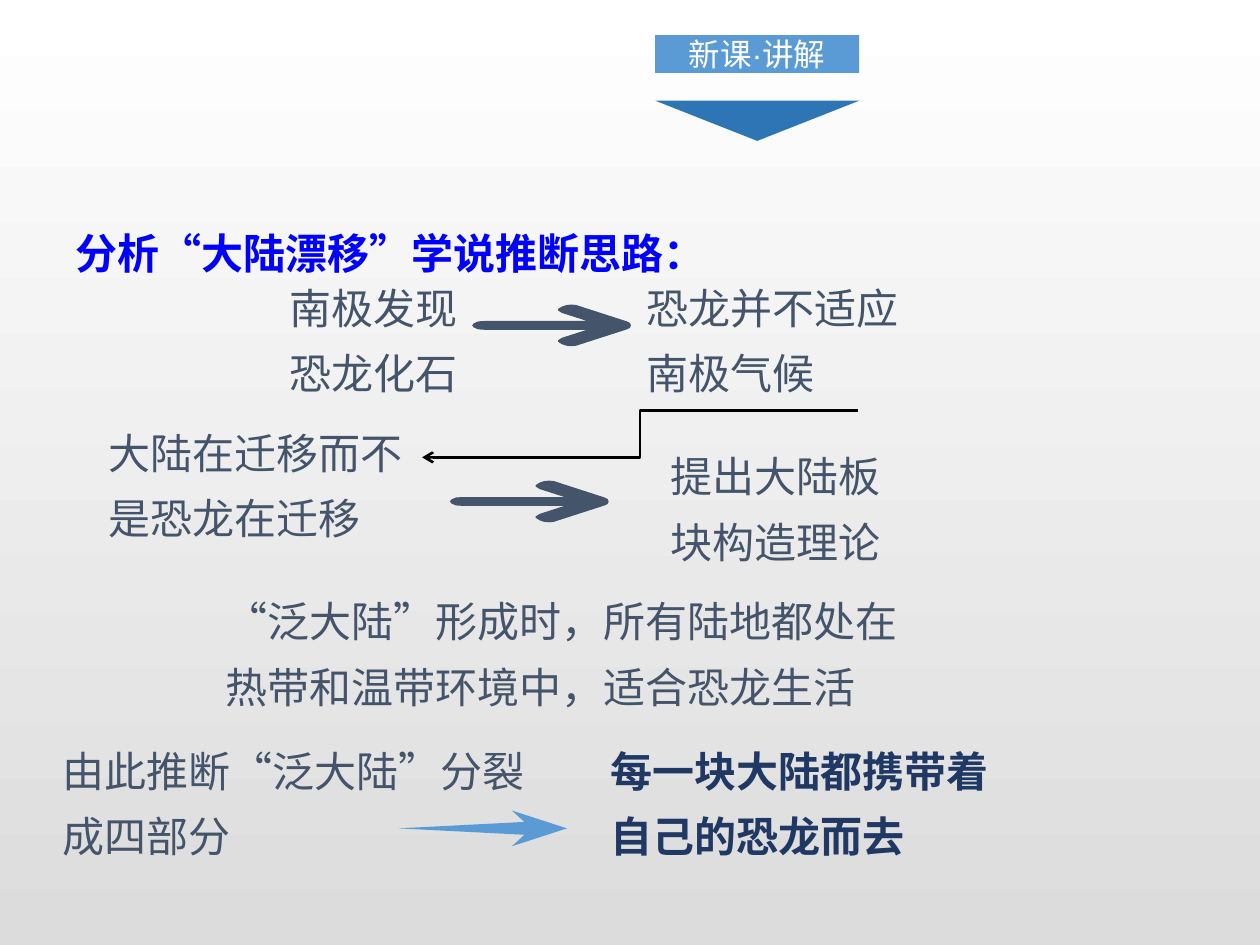
from dataclasses import dataclass

from lxml.etree import SubElement
from pptx import Presentation
from pptx.dml.color import RGBColor
from pptx.enum.lang import MSO_LANGUAGE_ID as Lang
from pptx.enum.shapes import MSO_CONNECTOR as Connector, MSO_SHAPE as Shape
from pptx.enum.text import MSO_ANCHOR as Anchor, MSO_AUTO_SIZE as AutoSize, PP_ALIGN as Align
from pptx.oxml.ns import qn
from pptx.util import Cm, Pt


@dataclass(frozen=True)
class Theme:
    heading: str = "0000FF"
    body: str = "44546A"
    conclusion: str = "203864"
    banner: str = "5B9BD5"
    banner_tip: str = "2E75B6"
    banner_text: str = "FFFFFF"
    line: str = "000000"
    background: tuple = ("FFFFFF", "DCDCDC")
    text_size: int = 24
    banner_size: int = 18
    cjk_font: str = "Noto Sans CJK SC"
    heading_font: str = "Times New Roman"
    banner_font: str = "Arial"


# Upper halves of the arrow outlines, from tail to tip, in cm around the axis
ROUND_ARROW = [(0, 0), (0.03, -0.04), (0.12, -0.08), (0.26, -0.09),
               (2.31, -0.09), (1.81, -0.25), (1.73, -0.3), (1.73, -0.33),
               (1.81, -0.38), (1.9, -0.41), (2, -0.42), (2.1, -0.41),
               (2.19, -0.38), (3.12, -0.08), (3.18, -0.05), (3.2, 0)]
SHARP_ARROW = [(0, 0), (2.54, -0.13), (2.29, -0.36), (3.4, 0)]


class SlideBuilder:
    def __init__(self, slide, theme):
        self.slide = slide
        self.theme = theme

    def background(self):
        fill = self.slide.background.fill
        fill.gradient()
        fill.gradient_angle = 270
        for stop, color, position in zip(fill.gradient_stops, self.theme.background, (0, 1)):
            stop.color.rgb = RGBColor.from_string(color)
            stop.position = position

    def format_text(self, frame, font_name, size, color, bold=False, align=Align.LEFT):
        for paragraph in frame.paragraphs:
            paragraph.alignment = align
            for run in paragraph.runs:
                font = run.font
                font.size, font.bold, font.name = Pt(size), bold, font_name
                font.color.rgb = RGBColor.from_string(color)
                font.language_id = Lang.SIMPLIFIED_CHINESE
                east_asian = SubElement(font._element, qn("a:ea"))
                east_asian.set("typeface", self.theme.cjk_font)

    def paint(self, shape, color):
        shape.shadow.inherit = False
        shape.fill.solid()
        shape.fill.fore_color.rgb = RGBColor.from_string(color)
        shape.line.fill.background()

    def heading(self, text, left, top, width, height):
        title = self.slide.shapes.title
        title.left, title.top, title.width, title.height = map(Cm, (left, top, width, height))
        frame = title.text_frame
        frame.text = text
        frame.vertical_anchor = Anchor.MIDDLE
        frame.auto_size = AutoSize.NONE
        self.format_text(frame, self.theme.heading_font, self.theme.text_size,
                         self.theme.heading, bold=True)

    def statement(self, text, left, top, width, color, bold=False):
        box = self.slide.shapes.add_textbox(Cm(left), Cm(top), Cm(width), Cm(2.92))
        frame = box.text_frame
        frame.word_wrap = True
        frame.text = text
        frame.paragraphs[0].line_spacing = 1.3
        self.format_text(frame, self.theme.cjk_font, self.theme.text_size, color, bold)

    def banner(self, text, left, top, width):
        group = self.slide.shapes.add_group_shape()
        label = group.shapes.add_shape(Shape.RECTANGLE, Cm(left), Cm(top), Cm(width), Cm(0.76))
        self.paint(label, self.theme.banner)
        frame = label.text_frame
        frame.margin_left = frame.margin_right = frame.margin_top = frame.margin_bottom = 0
        frame.vertical_anchor = Anchor.MIDDLE
        frame.text = text
        self.format_text(frame, self.theme.banner_font, self.theme.banner_size,
                         self.theme.banner_text, align=Align.CENTER)
        tip = group.shapes.add_shape(Shape.ISOSCELES_TRIANGLE, Cm(left), Cm(top + 1.32),
                                     Cm(width), Cm(0.81))
        tip.rotation = 180
        self.paint(tip, self.theme.banner_tip)

    def arrow(self, half, left, axis, color):
        """Mirror the upper half of an outline about its axis."""
        outline = half + [(x, -y) for x, y in reversed(half[1:-1])]
        points = [(Cm(left + x), Cm(axis + y)) for x, y in outline]
        builder = self.slide.shapes.build_freeform(*points[0])
        builder.add_line_segments(points[1:], close=True)
        self.paint(builder.convert_to_shape(), color)

    def bent_arrow(self, start, end):
        link = self.slide.shapes.add_connector(Connector.ELBOW, *map(Cm, start + end))
        link.line.width = Pt(1.5)
        link.line.color.rgb = RGBColor.from_string(self.theme.line)
        SubElement(link.line._get_or_add_ln(), qn("a:tailEnd")).set("type", "arrow")
        SubElement(link._element.spPr, qn("a:effectLst"))


def main():
    theme = Theme()
    deck = Presentation()
    deck.slide_width, deck.slide_height = Cm(25.4), Cm(19.05)
    title_only = deck.slide_layouts[5]
    page = SlideBuilder(deck.slides.add_slide(title_only), theme)
    page.background()

    # Heading and section banner
    page.heading("分析“大陆漂移”学说推断思路：", 1.27, 4.45, 13.36, 1.27)
    page.banner("新课·讲解", 13.21, 0.71, 4.11)

    # Steps of the reasoning
    steps = [
        ("南极发现恐龙化石", 5.59, 5.26, 4.7),
        ("恐龙并不适应南极气候", 12.78, 5.26, 5.84),
        ("大陆在迁移而不是恐龙在迁移", 1.93, 8.18, 6.86),
        ("提出大陆板块构造理论", 13.26, 8.66, 5.54),
        ("“泛大陆”形成时，所有陆地都处在热带和温带环境中，适合恐龙生活", 4.29, 11.58, 14.81),
        ("由此推断“泛大陆”分裂成四部分", 1.02, 14.6, 10.03),
    ]
    for text, left, top, width in steps:
        page.statement(text, left, top, width, theme.body)
    page.statement("每一块大陆都携带着自己的恐龙而去", 12.06, 14.6, 8.61,
                   theme.conclusion, bold=True)

    # Arrows between the steps
    page.arrow(ROUND_ARROW, 9.52, 6.56, theme.body)
    page.bent_arrow((17.3, 8.28), (8.51, 9.22))
    page.arrow(ROUND_ARROW, 9.07, 10.11, theme.body)
    page.arrow(SHARP_ARROW, 8.03, 16.7, theme.banner)

    deck.save("out.pptx")


if __name__ == "__main__":
    main()
